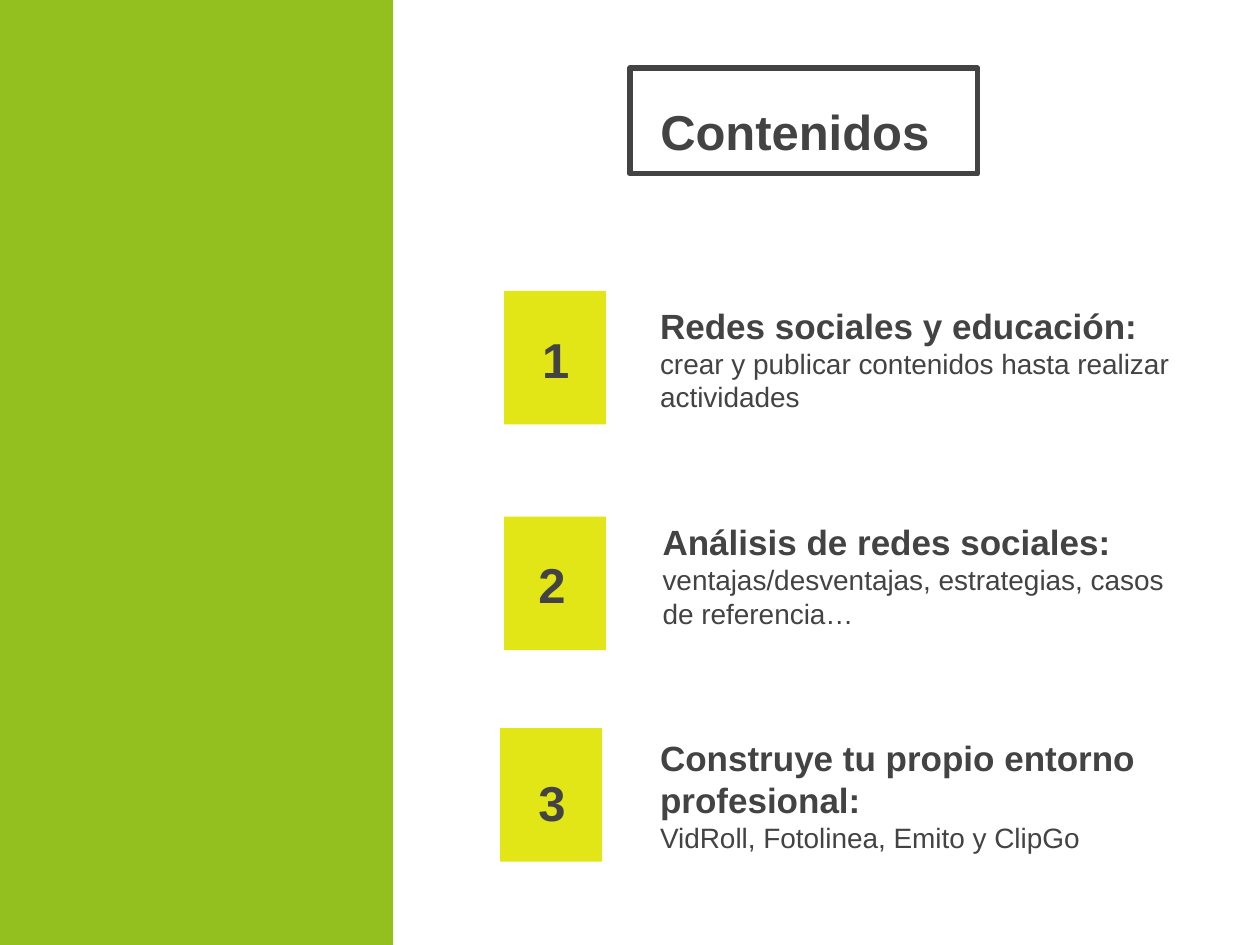
from pptx import Presentation
from pptx.dml.color import RGBColor
from pptx.enum.shapes import MSO_SHAPE as Preset
from pptx.enum.text import MSO_ANCHOR as Anchor, MSO_AUTO_SIZE as AutoSize, PP_ALIGN as Align
from pptx.util import Inches, Pt

GREEN = RGBColor(0x93, 0xC0, 0x1F)
YELLOW = RGBColor(0xE2, 0xE6, 0x16)
CHARCOAL = RGBColor(0x43, 0x43, 0x43)


class ContentsSlide:
    """Holds the style and the current slide, with a method per element."""

    HEADLINE = {"name": "Arial", "size": Pt(28), "bold": True}
    TOPIC = {"name": "Arial", "size": Pt(20), "bold": True}
    DETAIL = {"name": "Arial", "size": Pt(16), "bold": False}

    def __init__(self, deck):
        self.slide = deck.slides.add_slide(deck.slide_layouts[5])

    def style(self, font, values):
        for attribute, value in values.items():
            setattr(font, attribute, value)
        font.color.rgb = CHARCOAL

    def frame(self, holder, anchor):
        frame = holder.text_frame
        settings = {"word_wrap": True, "auto_size": AutoSize.NONE, "vertical_anchor": anchor}
        margins = dict.fromkeys(
            ("margin_left", "margin_top", "margin_right", "margin_bottom"), Inches(0.1))
        for attribute, value in {**settings, **margins}.items():
            setattr(frame, attribute, value)
        return frame.paragraphs[0]

    def add_words(self, paragraph, text, values):
        run = paragraph.add_run()
        run.text = text
        self.style(run.font, values)

    def block(self, left, top, width, height, fill=None):
        block = self.slide.shapes.add_shape(
            Preset.RECTANGLE, *map(Inches, (left, top, width, height)))
        block.shadow.inherit = False
        if fill is None:
            block.fill.background()
            block.line.color.rgb = CHARCOAL
            block.line.width = Pt(3)
        else:
            block.fill.solid()
            block.fill.fore_color.rgb = fill
            block.line.fill.background()

    def title(self, text, left, top, width, height):
        title = self.slide.shapes.title
        place = {"left": left, "top": top, "width": width, "height": height}
        for attribute, value in place.items():
            setattr(title, attribute, Inches(value))
        heading = self.frame(title, Anchor.MIDDLE)
        heading.alignment = Align.LEFT
        heading.line_spacing = 1.15
        self.add_words(heading, text, self.HEADLINE)

    def text_box(self, left, top, width, height, anchor, align):
        box = self.slide.shapes.add_textbox(*map(Inches, (left, top, width, height)))
        paragraph = self.frame(box, anchor)
        paragraph.alignment = align
        return paragraph

    def number(self, text, left, top):
        paragraph = self.text_box(left, top, 1.38, 0.93, Anchor.MIDDLE, Align.CENTER)
        self.add_words(paragraph, text, self.HEADLINE)

    def topic(self, heading, detail, left, top, width):
        paragraph = self.text_box(left, top, width, 1, Anchor.BOTTOM, Align.LEFT)
        self.add_words(paragraph, heading, self.TOPIC)
        paragraph.add_line_break()
        self.add_words(paragraph, detail, self.DETAIL)


def main():
    deck = Presentation()
    deck.slide_width, deck.slide_height = Inches(10), Inches(7.5)
    contents = ContentsSlide(deck)
    contents.block(0, 0, 3.12, 7.5, GREEN)
    contents.block(5, 0.54, 2.76, 0.84)
    contents.title("Contenidos", 5.14, 0.19, 4.81, 1.62)

    topics = [
        ("Redes sociales y educación:",
         "crear y publicar contenidos hasta realizar actividades",
         (4, 2.31), (3.72, 2.38), (5.14, 2.38, 4.31)),
        ("Análisis de redes sociales:",
         "ventajas/desventajas, estrategias, casos de referencia…",
         (4, 4.1), (3.69, 4.17), (5.16, 4.1, 4.18)),
        ("Construye tu propio entorno profesional:",
         "VidRoll, Fotolinea, Emito y ClipGo",
         (3.97, 5.78), (3.69, 5.9), (5.14, 5.88, 4.17)),
    ]
    for order, (heading, detail, tile, number, place) in enumerate(topics, 1):
        contents.block(*tile, 0.81, 1.06, YELLOW)
        contents.number(str(order), *number)
        contents.topic(heading, detail, *place)
    deck.save("out.pptx")


if __name__ == "__main__":
    main()
